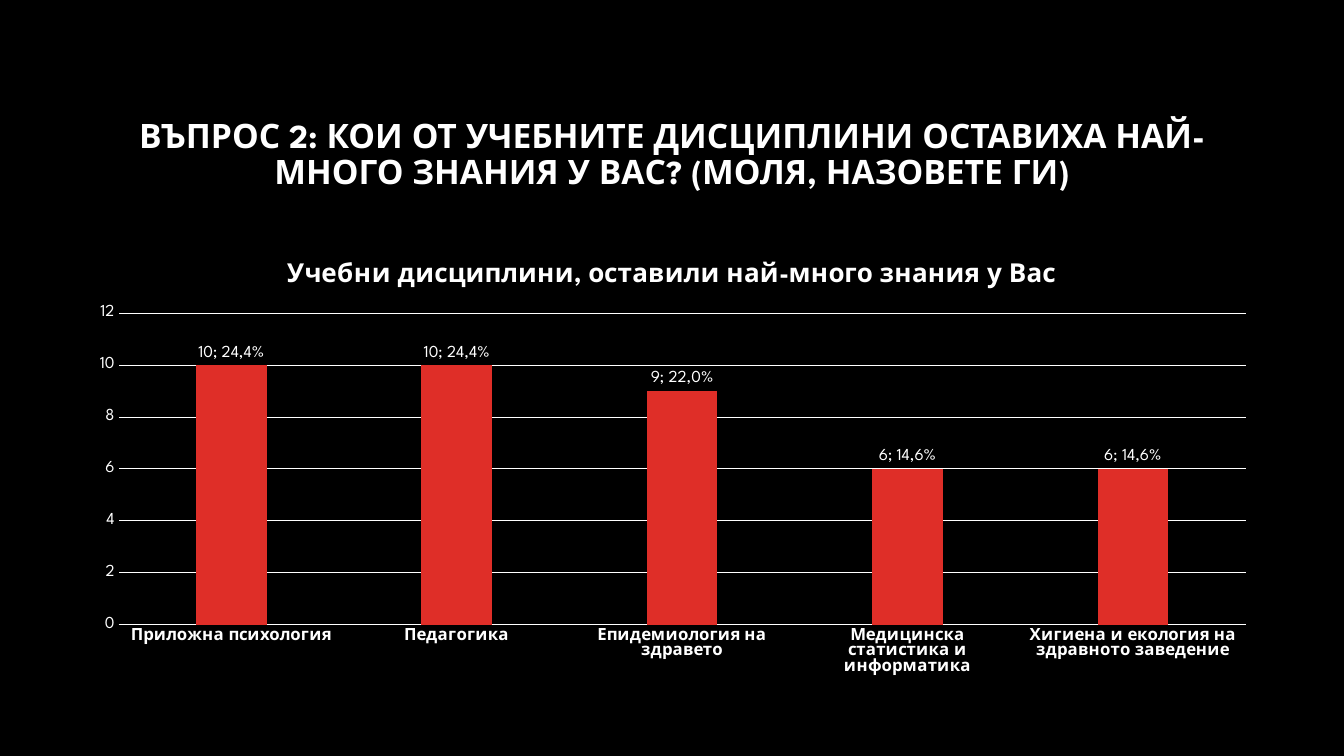
from dataclasses import dataclass
from typing import Any

import pptx
import pptx.chart.data
import pptx.dml.color
import pptx.enum.chart
import pptx.enum.text
import pptx.oxml
import pptx.oxml.ns
import pptx.util

Inches = pptx.util.Inches
Pt = pptx.util.Pt

COLORS = {"background": "000000", "text": "FFFFFF", "bar": "DF2E28"}
FONT = "League Spartan"
QUESTION = (
    "ВЪПРОС 2: КОИ ОТ УЧЕБНИТЕ ДИСЦИПЛИНИ ОСТАВИХА НАЙ-МНОГО "
    "ЗНАНИЯ У ВАС? (МОЛЯ, НАЗОВЕТЕ ГИ)"
)
CHART_TITLE = "Учебни дисциплини, оставили най-много знания у Вас"
PLOT_AREA = {"x": 0.036, "y": 0.161, "w": 0.945, "h": 0.702}


@dataclass
class Discipline:
    name: str
    answers: int
    share: str


DISCIPLINES = [
    Discipline("Приложна психология", 10, "24,4%"),
    Discipline("Педагогика", 10, "24,4%"),
    Discipline("Епидемиология на здравето", 9, "22,0%"),
    Discipline("Медицинска статистика и информатика", 6, "14,6%"),
    Discipline("Хигиена и екология на здравното заведение", 6, "14,6%"),
]


def rgb(key: str) -> pptx.dml.color.RGBColor:
    return pptx.dml.color.RGBColor.from_string(COLORS[key])


def apply(target: Any, values: dict[str, Any]) -> None:
    for attribute, value in values.items():
        setattr(target, attribute, value)


def style_font(font: Any, size: float, bold: bool = False) -> None:
    apply(font, {"name": FONT, "size": Pt(size), "bold": bold})
    font.color.rgb = rgb("text")


def style_line(line: Any) -> None:
    line.color.rgb = rgb("text")
    line.width = Pt(0.75)


def add_question(slide: Any) -> None:
    box = slide.shapes.add_textbox(Inches(0.75), Inches(0.84), Inches(11.83), Inches(1.41))
    frame = box.text_frame
    apply(frame, {"word_wrap": True, "vertical_anchor": pptx.enum.text.MSO_ANCHOR.MIDDLE})
    paragraph = frame.paragraphs[0]
    apply(paragraph, {"alignment": pptx.enum.text.PP_ALIGN.CENTER, "line_spacing": 0.9})
    run = paragraph.add_run()
    run.text = QUESTION
    style_font(run.font, 24, bold=True)


def place_plot_area(chart: Any) -> None:
    plot_area = chart.element.find(".//" + pptx.oxml.ns.qn("c:plotArea"))
    for old_layout in plot_area.findall(pptx.oxml.ns.qn("c:layout")):
        plot_area.remove(old_layout)
    modes = "".join(f'<c:{axis}Mode val="edge"/>' for axis in "xy")
    sizes = "".join(f'<c:{key} val="{value}"/>' for key, value in PLOT_AREA.items())
    plot_area.insert(0, pptx.oxml.parse_xml(
        f'<c:layout {pptx.oxml.ns.nsdecls("c")}><c:manualLayout>'
        f'<c:layoutTarget val="inner"/>{modes}{sizes}</c:manualLayout></c:layout>'
    ))


def style_axes(chart: Any) -> None:
    no_tick = pptx.enum.chart.XL_TICK_MARK.NONE
    subjects, answers = chart.category_axis, chart.value_axis
    for axis in (subjects, answers):
        apply(axis, {"major_tick_mark": no_tick, "minor_tick_mark": no_tick})
        style_font(axis.tick_labels.font, 12, bold=axis is subjects)
    style_line(subjects.format.line)
    apply(answers, {"minimum_scale": 0, "maximum_scale": 12, "major_unit": 2,
                    "has_major_gridlines": True})
    style_line(answers.major_gridlines.format.line)
    answers.format.line.fill.background()


def add_discipline_chart(slide: Any) -> None:
    data = pptx.chart.data.CategoryChartData(number_format="0")
    data.categories = [discipline.name for discipline in DISCIPLINES]
    data.add_series(CHART_TITLE, [discipline.answers for discipline in DISCIPLINES])
    chart = slide.shapes.add_chart(
        pptx.enum.chart.XL_CHART_TYPE.COLUMN_CLUSTERED,
        Inches(0.75), Inches(2.4), Inches(11.83), Inches(4.4), data,
    ).chart
    style_font(chart.font, 10)
    apply(chart, {"has_legend": False, "has_title": True})

    # Chart title
    title = chart.chart_title
    title.include_in_layout = False
    title.text_frame.text = CHART_TITLE
    style_font(title.text_frame.paragraphs[0].runs[0].font, 18.6, bold=True)

    # Columns and their labels
    plot = chart.plots[0]
    apply(plot, {"gap_width": 219, "overlap": -27, "vary_by_categories": False})
    columns = plot.series[0]
    columns.format.fill.solid()
    columns.format.fill.fore_color.rgb = rgb("bar")
    outside = pptx.enum.chart.XL_LABEL_POSITION.OUTSIDE_END
    apply(columns.data_labels, {"show_value": True, "position": outside})
    style_font(columns.data_labels.font, 12, bold=True)
    for index, discipline in enumerate(DISCIPLINES):
        label = columns.points[index].data_label
        label.text_frame.text = f"{discipline.answers}; {discipline.share}"
        style_font(label.text_frame.paragraphs[0].runs[0].font, 12)
        label.position = outside

    style_axes(chart)
    place_plot_area(chart)


def main() -> None:
    presentation = pptx.Presentation()
    apply(presentation, {"slide_width": Inches(13.33), "slide_height": Inches(7.5)})
    slide = presentation.slides.add_slide(presentation.slide_layouts[6])
    slide.background.fill.solid()
    slide.background.fill.fore_color.rgb = rgb("background")
    add_question(slide)
    add_discipline_chart(slide)
    presentation.save("out.pptx")


if __name__ == "__main__":
    main()
